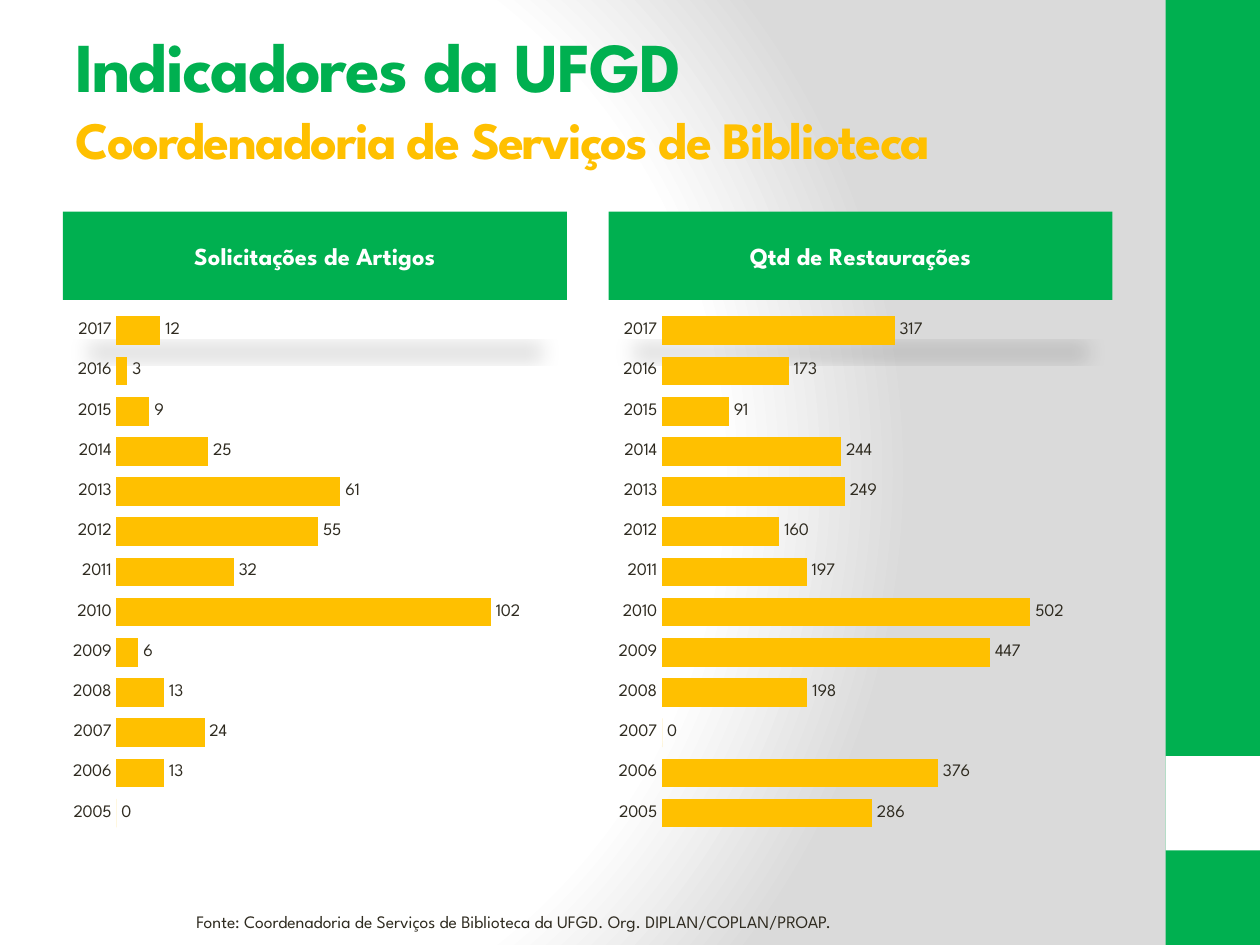
from lxml import etree
from pptx import Presentation
from pptx.chart.data import CategoryChartData
from pptx.dml.color import RGBColor
from pptx.enum.chart import (
    XL_CHART_TYPE as ChartType,
    XL_LABEL_POSITION as LabelPosition,
    XL_TICK_MARK as TickMark,
)
from pptx.enum.shapes import MSO_SHAPE as Shape
from pptx.enum.text import MSO_ANCHOR as Anchor, PP_ALIGN as Align
from pptx.oxml import parse_xml
from pptx.oxml.ns import nsdecls, qn
from pptx.util import Inches, Pt

COLORS = {
    "green": "00B050",
    "amber": "FFC000",
    "white": "FFFFFF",
    "gray": "DADADA",
    "text": "2F2B20",
    "black": "000000",
}
FONT = "League Spartan"
YEARS = [str(year) for year in range(2005, 2018)]
PANELS = [
    ("Solicitações de Artigos", [0, 13, 24, 13, 6, 102, 32, 55, 61, 25, 9, 3, 12]),
    ("Qtd de Restaurações",
     [286, 376, 0, 198, 447, 502, 197, 160, 249, 244, 91, 173, 317]),
]


class SlideBuilder:
    def __init__(self, slide):
        self.slide = slide

    def color(self, name):
        return RGBColor.from_string(COLORS[name])

    def background(self):
        self.slide.background.fill.gradient()
        gradient = self.slide.element.find(".//" + qn("a:gradFill"))
        stops = "".join(
            f'<a:gs pos="{position}"><a:srgbClr val="{COLORS[name]}"/></a:gs>'
            for position, name in ((0, "white"), (75000, "white"), (100000, "gray"))
        )
        gradient.getparent().replace(gradient, parse_xml(
            f'<a:gradFill {nsdecls("a")} rotWithShape="1"><a:gsLst>{stops}</a:gsLst>'
            '<a:path path="circle">'
            '<a:fillToRect l="20000" t="50000" r="100000" b="50000"/>'
            '</a:path></a:gradFill>'
        ))

    def rectangle(self, left, top, width, height, fill):
        shape = self.slide.shapes.add_shape(
            Shape.RECTANGLE, Inches(left), Inches(top), Inches(width), Inches(height))
        shape.shadow.inherit = False
        shape.fill.solid()
        shape.fill.fore_color.rgb = self.color(fill)
        shape.line.fill.background()
        return shape

    def run(self, paragraph, text, size, color, bold=False):
        run = paragraph.add_run()
        run.text = text
        run.font.name = FONT
        run.font.size = Pt(size)
        run.font.bold = bold
        run.font.color.rgb = self.color(color)
        return run

    def text_box(self, left, top, width, height, anchor=Anchor.TOP):
        frame = self.slide.shapes.add_textbox(
            Inches(left), Inches(top), Inches(width), Inches(height)).text_frame
        frame.word_wrap = True
        frame.vertical_anchor = anchor
        return frame.paragraphs[0]

    def title(self, first, second):
        paragraph = self.text_box(0.5, 0.3, 8.33, 0.93, Anchor.MIDDLE)
        runs = [self.run(paragraph, first, 40, "green", True)]
        paragraph.add_line_break()
        runs.append(self.run(paragraph, second, 30, "amber", True))
        for run in runs:
            run.font._element.set("spc", "-100")

    def header(self, left, text):
        shape = self.rectangle(left, 1.68, 4, 0.7, "green")
        effects = shape.element.spPr.find(qn("a:effectLst"))
        shadow = etree.SubElement(
            effects, qn("a:outerShdw"), blurRad=str(Pt(12)), dist=str(Pt(25)),
            dir="5400000", sx="90000", sy="-19000", rotWithShape="0")
        tint = etree.SubElement(shadow, qn("a:srgbClr"), val=COLORS["black"])
        etree.SubElement(tint, qn("a:alpha"), val="15000")
        shape.text_frame.vertical_anchor = Anchor.MIDDLE
        paragraph = shape.text_frame.paragraphs[0]
        paragraph.alignment = Align.CENTER
        self.run(paragraph, text, 14, "white", True)

    def bar_chart(self, left, values):
        data = CategoryChartData()
        data.categories = YEARS
        data.add_series("Series 1", values)
        chart = self.slide.shapes.add_chart(
            ChartType.BAR_CLUSTERED, Inches(left), Inches(2.38),
            Inches(4), Inches(4.32), data).chart
        chart.has_legend = False
        chart.has_title = False
        chart.font.name = FONT
        chart.font.size = Pt(10)
        chart.font.color.rgb = self.color("text")
        chart.category_axis.major_tick_mark = TickMark.NONE
        chart.category_axis.format.line.fill.background()
        chart.value_axis.has_major_gridlines = False
        chart.value_axis.visible = False
        plot = chart.plots[0]
        plot.gap_width = 40
        plot.vary_by_categories = False
        plot.has_data_labels = True
        plot.data_labels.show_value = True
        plot.data_labels.position = LabelPosition.OUTSIDE_END
        fill = plot.series[0].format.fill
        fill.solid()
        fill.fore_color.rgb = self.color("amber")


def main():
    presentation = Presentation()
    presentation.slide_width = Inches(10)
    presentation.slide_height = Inches(7.5)
    builder = SlideBuilder(
        presentation.slides.add_slide(presentation.slide_layouts[6]))
    builder.background()
    builder.rectangle(9.25, 0, 0.75, 7.5, "green")
    builder.rectangle(9.25, 6, 0.75, 0.75, "white")
    builder.title("Indicadores da UFGD", "Coordenadoria de Serviços de Biblioteca")
    for index, (heading, values) in enumerate(PANELS):
        left = 0.5 + index * 4.33
        builder.header(left, heading)
        builder.bar_chart(left, values)
    source = builder.text_box(1.46, 7.18, 6.61, 0.27)
    builder.run(
        source,
        "Fonte: Coordenadoria de Serviços de Biblioteca da UFGD. "
        "Org. DIPLAN/COPLAN/PROAP.",
        10, "text")
    presentation.save("out.pptx")


if __name__ == "__main__":
    main()
